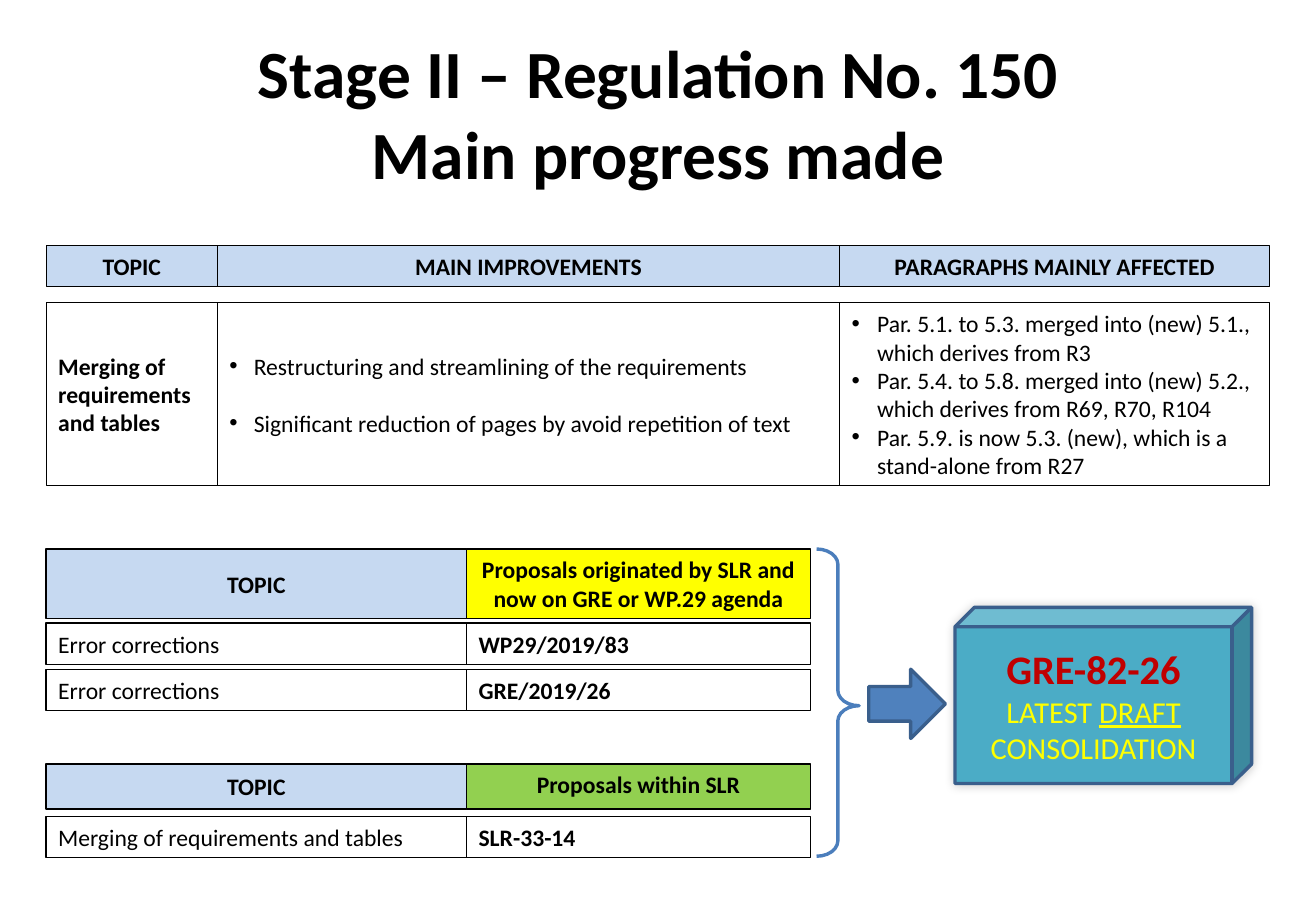
import lxml.etree
import pptx
import pptx.dml.color
import pptx.enum.shapes
import pptx.enum.text
import pptx.oxml.ns
import pptx.util

Inches = pptx.util.Inches
Pt = pptx.util.Pt
Shapes = pptx.enum.shapes.MSO_SHAPE
Align = pptx.enum.text.PP_ALIGN
Anchor = pptx.enum.text.MSO_ANCHOR
qn = pptx.oxml.ns.qn

HEADER_BLUE = "C6D9F1"
LEFT = 0.38
ROW_HEIGHT = 0.34
SUMMARY_WIDTHS = (1.41, 5.12, 3.54)
PROPOSAL_WIDTHS = (3.46, 2.83)


def color(hex_string):
    """Return the RGB colour for a hex string."""
    return pptx.dml.color.RGBColor.from_string(hex_string)


def add_bullet(paragraph, indent):
    """Give a paragraph a hanging round bullet."""
    properties = paragraph._p.get_or_add_pPr()
    properties.set("marL", str(Inches(indent)))
    properties.set("indent", str(-Inches(indent)))
    font = lxml.etree.SubElement(properties, qn("a:buFont"))
    font.set("typeface", "Arial")
    lxml.etree.SubElement(properties, qn("a:buChar")).set("char", "•")


def add_run(paragraph, text, size=14, bold=False, underline=False, ink="000000"):
    """Append a formatted run to a paragraph."""
    run = paragraph.add_run()
    run.text = text
    run.font.name = "Calibri"
    run.font.size = Pt(size)
    run.font.bold = bold
    run.font.underline = underline
    run.font.color.rgb = color(ink)


def write_text(shape, lines, align=Align.LEFT, anchor=Anchor.MIDDLE, bullet=None, gap=0, **font):
    """Fill a shape with one paragraph for each line of text."""
    frame = shape.text_frame
    frame.word_wrap = True
    frame.vertical_anchor = anchor
    for index, line in enumerate(lines):
        paragraph = frame.paragraphs[0] if index == 0 else frame.add_paragraph()
        paragraph.alignment = align
        if index < len(lines) - 1:
            paragraph.space_after = Pt(gap)
        if bullet:
            add_bullet(paragraph, bullet)
        add_run(paragraph, line, **font)


def add_shape(slide, kind, box, fill=None, line="000000", line_width=0.75):
    """Add a preset shape without shadow in the given box."""
    shape = slide.shapes.add_shape(kind, *map(Inches, box))
    if fill:
        shape.fill.solid()
        shape.fill.fore_color.rgb = color(fill)
    else:
        shape.fill.background()
    shape.line.color.rgb = color(line)
    shape.line.width = Pt(line_width)
    shape.shadow.inherit = False
    return shape


def add_row(slide, top, height, widths, cells):
    """Place a row of bordered cells, each given as lines, fill and text format."""
    left = LEFT
    for width, (lines, fill, text_format) in zip(widths, cells):
        cell = add_shape(slide, Shapes.RECTANGLE, (left, top, width, height), fill)
        write_text(cell, lines, **text_format)
        left += width


def header(text, fill=HEADER_BLUE, **text_format):
    """Describe a centred bold header cell."""
    return [text], fill, dict(align=Align.CENTER, bold=True, **text_format)


def add_title(slide, box):
    """Place the two-line slide title."""
    title = slide.shapes.add_textbox(*map(Inches, box))
    lines = ["Stage II – Regulation No. 150", "Main progress made"]
    write_text(title, lines, align=Align.CENTER, anchor=Anchor.TOP, size=40, bold=True)


def add_summary(slide, top):
    """Place the header and body rows of the improvements overview."""
    titles = ("TOPIC", "MAIN IMPROVEMENTS", "PARAGRAPHS MAINLY AFFECTED")
    add_row(slide, top, ROW_HEIGHT, SUMMARY_WIDTHS, [header(title) for title in titles])
    improvements = [
        "Restructuring and streamlining of the requirements",
        "Significant reduction of pages by avoid repetition of text",
    ]
    affected = [
        "Par. 5.1. to 5.3. merged into (new) 5.1., which derives from R3",
        "Par. 5.4. to 5.8. merged into (new) 5.2., which derives from R69, R70, R104",
        "Par. 5.9. is now 5.3. (new), which is a stand-alone from R27",
    ]
    add_row(slide, top + 0.47, 1.51, SUMMARY_WIDTHS, [
        (["Merging of requirements and tables"], None, {"bold": True}),
        (improvements, None, {"bullet": 0.2, "gap": 17}),
        (affected, None, {"bullet": 0.21}),
    ])


def add_proposals(slide, top, header_height, gap, status, rows):
    """Place a header row and its proposal rows below it."""
    add_row(slide, top, header_height, PROPOSAL_WIDTHS, [header("TOPIC"), status])
    top += header_height + gap
    for topic, document in rows:
        cells = [([topic], None, {}), ([document], None, {"bold": True})]
        add_row(slide, top, ROW_HEIGHT, PROPOSAL_WIDTHS, cells)
        top += ROW_HEIGHT + gap


def add_soft_shadow(shape):
    """Give a shape a faint blurred shadow."""
    effects = shape._element.spPr.find(qn("a:effectLst"))
    shadow = lxml.etree.SubElement(effects, qn("a:outerShdw"))
    shadow.set("blurRad", str(Pt(6)))
    shadow.set("dist", "0")
    shadow.set("dir", str(315 * 60000))
    black = lxml.etree.SubElement(shadow, qn("a:srgbClr"))
    black.set("val", "000000")
    lxml.etree.SubElement(black, qn("a:alpha")).set("val", "20000")


def add_outcome(slide, left, top):
    """Place the brace, the arrow and the cube with the resulting document."""
    brace = add_shape(slide, Shapes.RIGHT_BRACE, (left, top, 0.35, 2.53), None, "4B7EBC", 2)
    brace.adjustments[0] = 0.36
    brace.adjustments[1] = 0.51
    arrow_box = (left + 0.43, top + 0.99, 0.63, 0.57)
    add_shape(slide, Shapes.RIGHT_ARROW, arrow_box, "4F81BD", "3A5F8C", 2)
    cube_box = (left + 1.14, top + 0.48, 2.44, 1.45)
    cube = add_shape(slide, Shapes.CUBE, cube_box, "4BACC6", "3A5F8C", 2)
    cube.adjustments[0] = 0.11
    add_soft_shadow(cube)
    write_text(cube, ["GRE-82-26"], align=Align.CENTER, size=24, bold=True, ink="C00000")
    caption = cube.text_frame.add_paragraph()
    caption.alignment = Align.CENTER
    for text, underline in (("LATEST ", False), ("DRAFT", True), (" CONSOLIDATION", False)):
        add_run(caption, text, size=18, underline=underline, ink="FFFF00")


def main():
    """Build the slide and save it."""
    presentation = pptx.Presentation()
    presentation.slide_width = Inches(10.83)
    presentation.slide_height = Inches(7.5)
    slide = presentation.slides.add_slide(presentation.slide_layouts[6])
    add_title(slide, (0.54, 0.21, 9.75, 1.45))
    add_summary(slide, 2.02)
    agenda = header("Proposals originated by SLR and now on GRE or WP.29 agenda", "FFFF00")
    corrections = [("Error corrections", "WP29/2019/83"), ("Error corrections", "GRE/2019/26")]
    add_proposals(slide, 4.52, 0.57, 0.04, agenda, corrections)
    internal = header("Proposals within SLR", "92D050", anchor=Anchor.TOP)
    merging = [("Merging of requirements and tables", "SLR-33-14")]
    add_proposals(slide, 6.29, 0.37, 0.06, internal, merging)
    add_outcome(slide, 6.72, 4.52)
    presentation.save("out.pptx")


if __name__ == "__main__":
    main()
